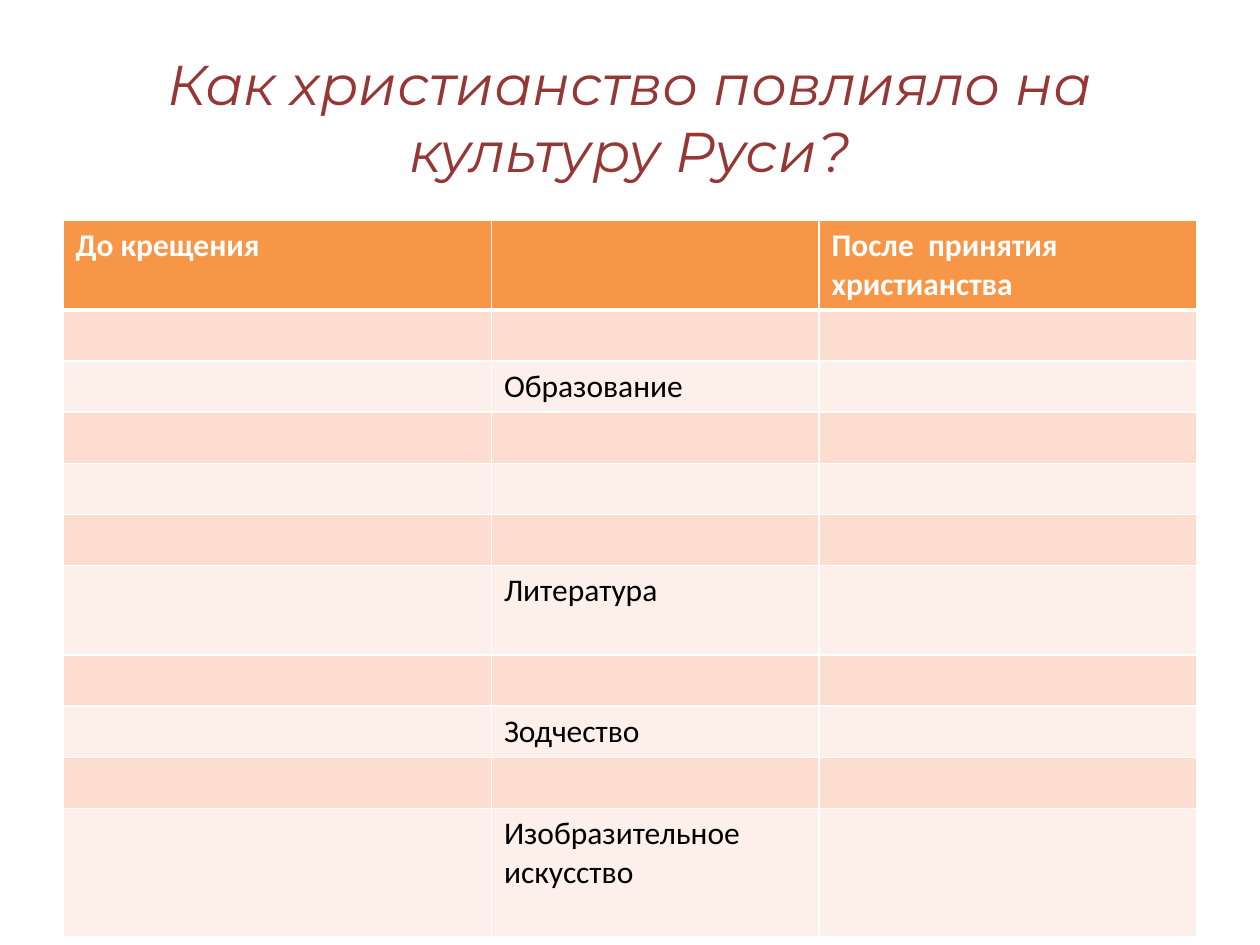
from pptx import Presentation
from pptx.dml.color import RGBColor
from pptx.enum.text import MSO_ANCHOR, PP_ALIGN
from pptx.oxml.ns import qn
from pptx.util import Pt
from lxml.etree import SubElement

HEAD = ["До крещения", "", "После  принятия христианства"]
TOPICS = {2: "Образование", 6: "Литература", 8: "Зодчество",
          10: "Изобразительное искусство"}
WIDTHS = [244.8, 187.2, 216]
ROW = 29.2
TALL = {0: 50.6, 6: 51.2, 10: 73.2}
COUNT = 11


def tint(code):
    return RGBColor.from_string(code)


def style(para, font, size, color, bold=False, italic=False):
    for run in para.runs:
        face = run.font
        face.name, face.size = font, Pt(size)
        face.bold, face.italic = bold, italic
        face.color.rgb = tint(color)


def add_title(slide, left, top, width, height):
    title = slide.shapes.title
    title.left, title.top = Pt(left), Pt(top)
    title.width, title.height = Pt(width), Pt(height)
    frame = title.text_frame
    frame.text = "Как христианство повлияло на культуру Руси?"
    frame.vertical_anchor = MSO_ANCHOR.MIDDLE
    para = frame.paragraphs[0]
    para.alignment = PP_ALIGN.CENTER
    style(para, "Montserrat", 32, "953735", italic=True)


def add_edges(cell, row):
    props = cell._tc.get_or_add_tcPr()
    thick = {"T": 3 if row == 1 else 1, "B": 3 if row == 0 else 1}
    for side in "LRTB":
        line = SubElement(props, qn(f"a:ln{side}"), w=str(Pt(thick.get(side, 1))))
        fill = SubElement(line, qn("a:solidFill"))
        SubElement(fill, qn("a:srgbClr"), val="FFFFFF")


def fill_cell(cell, row, text):
    add_edges(cell, row)
    cell.fill.solid()
    shade = "F79646" if row == 0 else "FCDDCF" if row % 2 else "FDEFE9"
    cell.fill.fore_color.rgb = tint(shade)
    if text:
        cell.text_frame.text = text
        color = "FFFFFF" if row == 0 else "000000"
        style(cell.text_frame.paragraphs[0], "Calibri", 18, color, bold=row == 0)


def add_grid(slide, left, top, width, height):
    frame = slide.shapes.add_table(COUNT, len(WIDTHS), Pt(left), Pt(top),
                                   Pt(width), Pt(height))
    table = frame.table
    for col, size in zip(table.columns, WIDTHS):
        col.width = Pt(size)
    for row in range(COUNT):
        table.rows[row].height = Pt(TALL.get(row, ROW))
        texts = HEAD if row == 0 else ["", TOPICS.get(row, ""), ""]
        for col, text in enumerate(texts):
            fill_cell(table.cell(row, col), row, text)


def main():
    deck = Presentation()
    deck.slide_width, deck.slide_height = Pt(720), Pt(540)
    slide = deck.slides.add_slide(deck.slide_layouts[5])
    add_title(slide, 36, 21.6, 648, 90)
    tall = sum(TALL.get(row, ROW) for row in range(COUNT))
    add_grid(slide, 36, 126, sum(WIDTHS), tall)
    deck.save("out.pptx")


if __name__ == "__main__":
    main()
